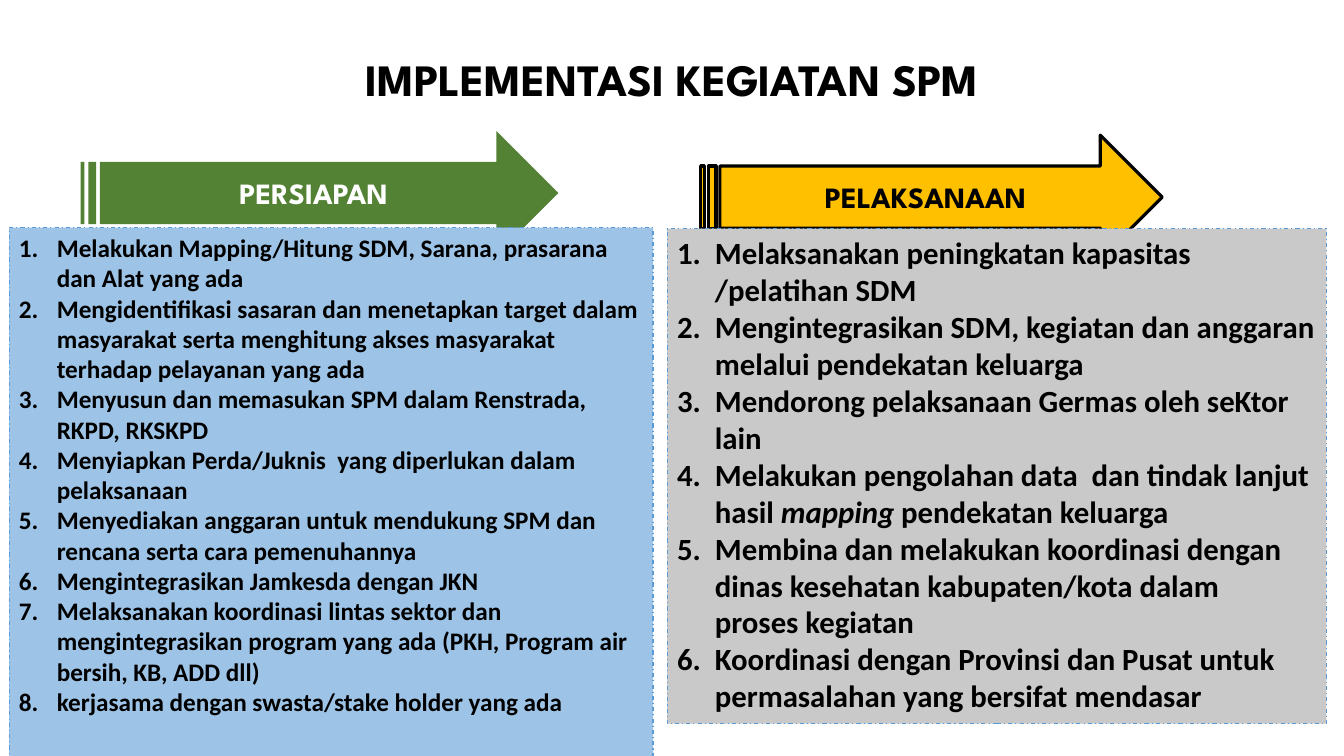
"""Build the SPM implementation slide with its preparation and execution steps."""
from lxml import etree
from pptx import Presentation
from pptx import util as u
from pptx.dml.color import RGBColor
from pptx.enum import dml, shapes, text
from pptx.oxml.ns import qn

COLOURS = {
    "black": "000000",
    "white": "FFFFFF",
    "green": "548235",
    "amber": "FFC000",
    "blue": "9DC3E6",
    "grey": "C9C9C9",
    "border": "5B9BD5",
}
HEADING_FONT = "League Spartan"
BODY_FONT = "Calibri"
HANGING_INDENT = u.Pt(27)

PREPARATION_STEPS = [
    ["Melakukan Mapping/Hitung SDM, Sarana, prasarana dan Alat yang ada"],
    ["Mengidentifikasi sasaran dan menetapkan target dalam masyarakat serta "
     "menghitung akses masyarakat terhadap pelayanan yang ada"],
    ["Menyusun dan memasukan SPM dalam Renstrada, RKPD, RKSKPD"],
    ["Menyiapkan Perda/Juknis  yang diperlukan dalam pelaksanaan"],
    ["Menyediakan anggaran untuk mendukung SPM dan rencana serta cara pemenuhannya"],
    ["Mengintegrasikan Jamkesda dengan JKN"],
    ["Melaksanakan koordinasi lintas sektor dan mengintegrasikan program yang ada "
     "(PKH, Program air bersih, KB, ADD dll)"],
    ["kerjasama dengan swasta/stake holder yang ada"],
]
EXECUTION_STEPS = [
    ["Melaksanakan peningkatan kapasitas /pelatihan SDM"],
    ["Mengintegrasikan SDM, kegiatan dan anggaran melalui pendekatan keluarga"],
    ["Mendorong pelaksanaan Germas oleh seKtor lain"],
    ["Melakukan pengolahan data  dan tindak lanjut hasil ", "mapping ", "pendekatan keluarga"],
    ["Membina dan melakukan koordinasi dengan dinas kesehatan kabupaten/kota "
     "dalam  proses kegiatan"],
    ["Koordinasi dengan Provinsi dan Pusat untuk permasalahan yang bersifat mendasar"],
]


def rgb(colour):
    """Return the named colour."""
    return RGBColor.from_string(COLOURS[colour])


def set_attributes(target, values):
    """Set each named value on the target."""
    for name, value in values.items():
        setattr(target, name, value)


def format_frame(shape, anchor):
    """Set the wrapping, margins and anchor of a shape's text."""
    set_attributes(shape.text_frame, {
        "word_wrap": True,
        "auto_size": text.MSO_AUTO_SIZE.NONE,
        "vertical_anchor": anchor,
        "margin_left": u.Pt(7.2),
        "margin_right": u.Pt(7.2),
        "margin_top": u.Pt(3.6),
        "margin_bottom": u.Pt(3.6),
    })


def add_run(paragraph, words, font, size, colour, italic=False):
    """Add a bold run to a paragraph."""
    run = paragraph.add_run()
    run.text = words
    set_attributes(run.font, {"name": font, "size": u.Pt(size), "bold": True, "italic": italic})
    run.font.color.rgb = rgb(colour)


def write_heading(shape, words, size, colour):
    """Write one centred heading line in a shape."""
    format_frame(shape, text.MSO_ANCHOR.MIDDLE)
    paragraph = shape.text_frame.paragraphs[0]
    paragraph.alignment = text.PP_ALIGN.CENTER
    add_run(paragraph, words, HEADING_FONT, size, colour)


def add_filled_shape(slide, kind, box, fill):
    """Add a flat shape with a solid fill."""
    shape = slide.shapes.add_shape(kind, *map(u.Pt, box))
    shape.shadow.inherit = False
    shape.fill.solid()
    shape.fill.fore_color.rgb = rgb(fill)
    return shape


def add_stage_arrow(slide, box, words, fill, colour, outline=None):
    """Add a striped arrow that names a stage."""
    arrow = add_filled_shape(slide, shapes.MSO_SHAPE.STRIPED_RIGHT_ARROW, box, fill)
    if outline:
        arrow.line.color.rgb = rgb(outline)
        arrow.line.width = u.Pt(2.25)
    else:
        arrow.line.fill.background()
    write_heading(arrow, words, 21, colour)


def number_paragraph(paragraph):
    """Give a paragraph an automatic number and a hanging indent."""
    properties = paragraph._p.get_or_add_pPr()
    properties.set("marL", str(HANGING_INDENT))
    properties.set("indent", str(-HANGING_INDENT))
    etree.SubElement(properties, qn("a:buFont"), typeface="+mj-lt")
    etree.SubElement(properties, qn("a:buAutoNum"), type="arabicPeriod")


def add_step_list(slide, box, steps, fill, size):
    """Add a dash-bordered panel with numbered steps."""
    panel = add_filled_shape(slide, shapes.MSO_SHAPE.RECTANGLE, box, fill)
    panel.line.color.rgb = rgb("border")
    set_attributes(panel.line, {"width": u.Pt(0.75), "dash_style": dml.MSO_LINE.DASH_DOT})
    format_frame(panel, text.MSO_ANCHOR.TOP)
    frame = panel.text_frame
    for index, step in enumerate(steps):
        paragraph = frame.add_paragraph() if index else frame.paragraphs[0]
        paragraph.alignment = text.PP_ALIGN.LEFT
        number_paragraph(paragraph)
        for position, words in enumerate(step):
            add_run(paragraph, words, BODY_FONT, size, "black", italic=position == 1)


def set_title(slide, box, words):
    """Place and write the slide title."""
    title = slide.shapes.title
    set_attributes(title, dict(zip(("left", "top", "width", "height"), map(u.Pt, box))))
    write_heading(title, words, 32, "black")


def main():
    """Build and save the presentation."""
    presentation = Presentation()
    set_attributes(presentation, {"slide_width": u.Pt(960), "slide_height": u.Pt(540)})
    slide = presentation.slides.add_slide(presentation.slide_layouts[5])
    set_title(slide, (173.5, 31, 613.5, 50.4), "IMPLEMENTASI KEGIATAN SPM")
    add_stage_arrow(slide, (500.4, 96.5, 329.8, 88.6), "PELAKSANAAN", "amber", "black", "black")
    add_stage_arrow(slide, (57.6, 93.6, 341.3, 88.6), "PERSIAPAN", "green", "white")
    add_step_list(slide, (6.5, 162.5, 460, 378), PREPARATION_STEPS, "blue", 18)
    add_step_list(slide, (476.6, 163.4, 470.9, 353.5), EXECUTION_STEPS, "grey", 22)
    presentation.save("out.pptx")


if __name__ == "__main__":
    main()
